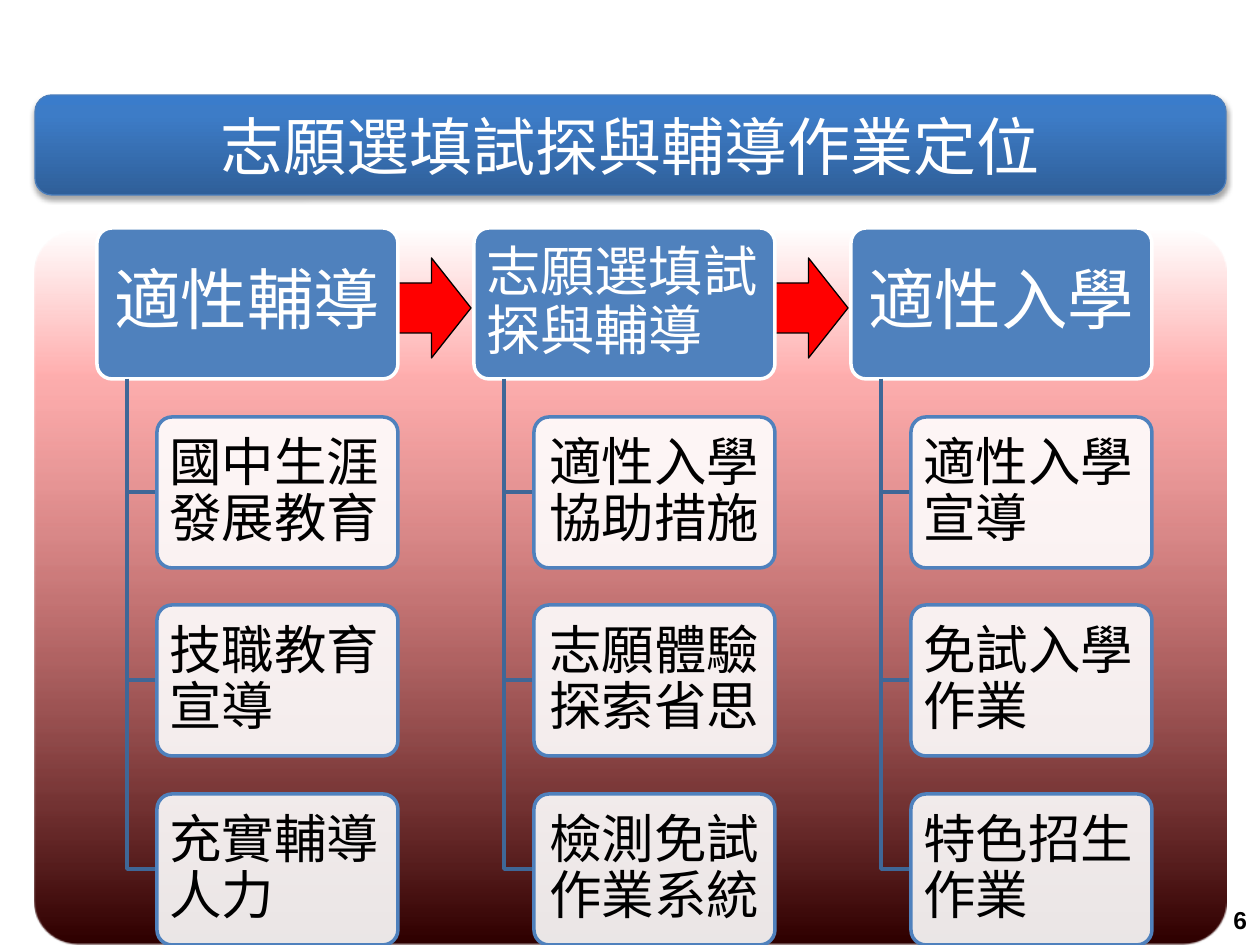
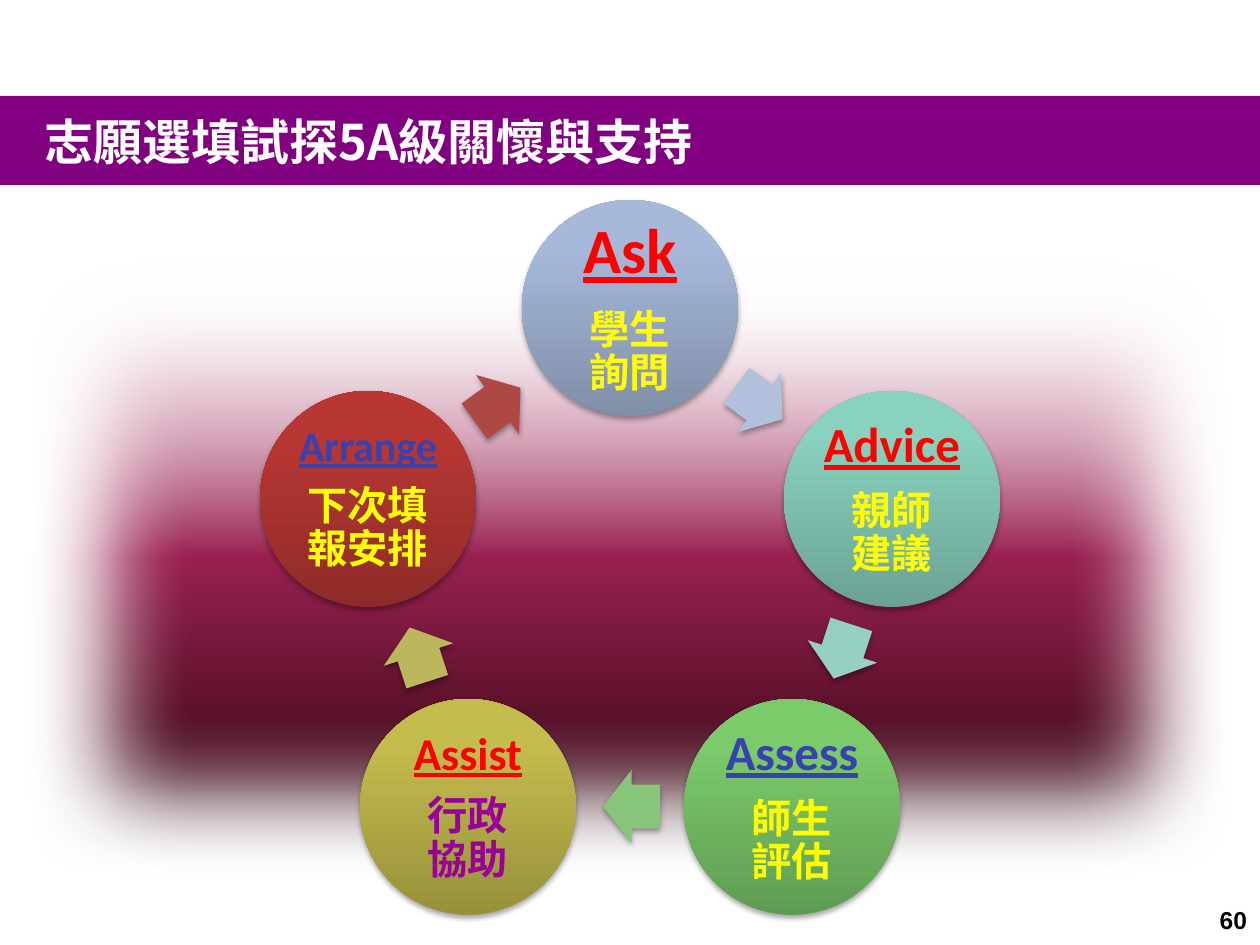
from math import cos, pi, sin

from lxml.etree import SubElement
from pptx import Presentation
from pptx.dml.color import RGBColor
from pptx.enum.shapes import MSO_SHAPE
from pptx.enum.text import MSO_ANCHOR, PP_ALIGN
from pptx.oxml.ns import qn
from pptx.util import Emu, Pt

PIXELS_PER_INCH = 126
CJK_FONT = "Noto Sans CJK SC"
COLORS = {
    "white": "FFFFFF", "black": "000000", "red": "FF0000", "yellow": "FFFF00",
    "indigo": "3742AF", "violet": "990099", "purple": "800080",
    "blue": "4F81BD", "branch": "3F6797", "bar_edge": "4B7EBC",
}
# Gradient stops run from bottom to top: position, colour, opacity (percent)
TITLE_STOPS = [(0, "2F5F99", 100), (80, "3D7CC7", 100), (100, "3A7CCB", 100)]
RED_PANEL_STOPS = [(0, "2E0000", 100), (80, "FF6161", 50), (100, "FF6161", 0)]
WINE_PANEL_STOPS = [(0, "1A0001", 100), (50, "992151", 100), (100, "FFFFFF", 0)]

# Heading, size, heading alignment, item alignment, items
STAGES = [
    ("適性輔導", 38, PP_ALIGN.CENTER, PP_ALIGN.LEFT,
     ["國中生涯發展教育", "技職教育宣導", "充實輔導人力"]),
    ("志願選填試探與輔導", 31, PP_ALIGN.LEFT, PP_ALIGN.CENTER,
     ["適性入學協助措施", "志願體驗探索省思", "檢測免試作業系統"]),
    ("適性入學", 38, PP_ALIGN.CENTER, PP_ALIGN.LEFT,
     ["適性入學宣導", "免試入學作業", "特色招生作業"]),
]
# Word, size, word colour, caption, caption colour, circle colours, arrow colour
CARE_STEPS = [
    ("Ask", 36, "red", "學生\n詢問", "yellow",
     ("808FA8", "A7B9DA", "A6BADC"), "B2C1DB"),
    ("Advice", 28, "red", "親師\n建議", "yellow",
     ("6AA293", "89D2BF", "89D4C0"), "96D0C1"),
    ("Assess", 28, "indigo", "師生\n評估", "yellow",
     ("5F9C53", "7CCB6B", "7BCD6A"), "87C67A"),
    ("Assist", 26, "red", "行政\n協助", "violet",
     ("97913B", "C4BC4D", "C7BF4B"), "BCB65D"),
    ("Arrange", 24, "indigo", "下次填報安排", "yellow",
     ("8E2B28", "B83734", "BB3531"), "AE4845"),
]


def px(length):
    return Emu(round(length * 914400 / PIXELS_PER_INCH))


def rgb(color):
    return RGBColor.from_string(COLORS.get(color, color))


def set_gradient(shape, stops):
    """Fill from bottom to top with the given stops."""
    shape.fill.gradient()
    shape.fill.gradient_angle = 90
    stop_list = shape._element.spPr.find(qn("a:gradFill")).find(qn("a:gsLst"))
    for old_stop in list(stop_list):
        stop_list.remove(old_stop)
    for position, color, opacity in stops:
        stop = SubElement(stop_list, qn("a:gs"), pos=str(position * 1000))
        stop_color = SubElement(stop, qn("a:srgbClr"), val=color)
        SubElement(stop_color, qn("a:alpha"), val=str(opacity * 1000))


def add_effect(shape, tag, **attributes):
    effects = shape._element.spPr.find(qn("a:effectLst"))
    return SubElement(effects, qn(tag), **attributes)


def add_shadow(shape):
    shadow = add_effect(shape, "a:outerShdw", blurRad="40000", dist="23000",
                        dir="5400000", rotWithShape="0")
    color = SubElement(shadow, qn("a:srgbClr"), val=COLORS["black"])
    SubElement(color, qn("a:alpha"), val="35000")


def set_line(shape, color, width):
    shape.line.color.rgb = rgb(color)
    shape.line.width = Pt(width)


def add_figure(slide, kind, box, fill, line=None, adjustments=()):
    """Add a preset shape; fill is a colour or a list of gradient stops."""
    shape = slide.shapes.add_shape(kind, *map(px, box))
    shape.shadow.inherit = False
    for index, value in enumerate(adjustments):
        shape.adjustments[index] = value
    if isinstance(fill, list):
        set_gradient(shape, fill)
    else:
        shape.fill.solid()
        shape.fill.fore_color.rgb = rgb(fill)
    if line:
        set_line(shape, *line)
    else:
        shape.line.fill.background()
    return shape


def set_frame(shape, horizontal=13, vertical=6):
    frame = shape.text_frame
    frame.word_wrap = True
    frame.vertical_anchor = MSO_ANCHOR.MIDDLE
    frame.margin_left = frame.margin_right = px(horizontal)
    frame.margin_top = frame.margin_bottom = px(vertical)
    return frame


def write(paragraph, text, size, color, alignment, font=CJK_FONT, bold=False,
          underline=False):
    paragraph.text = text
    paragraph.alignment = alignment
    paragraph.font.size = Pt(size)
    paragraph.font.bold = bold
    paragraph.font.underline = underline
    paragraph.font.color.rgb = rgb(color)
    paragraph.font.name = font
    defaults = paragraph._p.pPr.find(qn("a:defRPr"))
    SubElement(defaults, qn("a:ea"), typeface=font)


def set_diagram_spacing(paragraph):
    """Tight lines, followed by a gap of 35 % of the line."""
    paragraph.line_spacing = 0.9
    paragraph.space_after = Pt(0)
    gap = paragraph._p.pPr.find(qn("a:spcAft"))
    gap.remove(gap[0])
    SubElement(gap, qn("a:spcPct"), val="35000")


def add_page_number(slide, number):
    text_box = slide.shapes.add_textbox(px(966), px(895), px(294), px(50))
    write(set_frame(text_box).paragraphs[0], str(number), 14, "black",
          PP_ALIGN.RIGHT, font="Arial", bold=True)


def add_card(slide, box, text, size, fill, line, color, alignment, margins):
    card = add_figure(slide, MSO_SHAPE.ROUNDED_RECTANGLE, box, fill,
                      (line, 2), [0.1])
    paragraph = set_frame(card, *margins).paragraphs[0]
    set_diagram_spacing(paragraph)
    write(paragraph, text, size, color, alignment)
    return card


def add_branch(slide, left, top, right, bottom):
    builder = slide.shapes.build_freeform(px(left), px(top))
    builder.add_line_segments(
        [(px(left), px(bottom)), (px(right), px(bottom))], close=False)
    branch = builder.convert_to_shape()
    branch.shadow.inherit = False
    branch.fill.background()
    set_line(branch, "branch", 2)


def add_stage(slide, left, stage):
    heading, size, heading_alignment, item_alignment, items = stage
    add_card(slide, (left, 228, 301, 151), heading, size, "blue", "white",
             "white", heading_alignment, (10, 6) if size > 35 else (8, 5))
    for row, item in enumerate(items):
        top = 417 + row * 377 // 2
        add_branch(slide, left + 30, 379, left + 60, top + 75)
        card = add_card(slide, (left + 60, top, 241, 151), item, 30, "white",
                        "blue", "black", item_alignment, (8, 5))
        color = card._element.spPr.find(qn("a:solidFill"))[0]
        SubElement(color, qn("a:alpha"), val="90000")


def build_positioning_slide(slide):
    add_figure(slide, MSO_SHAPE.ROUNDED_RECTANGLE, (35, 231, 1191, 714),
               RED_PANEL_STOPS, adjustments=[0.061])
    title = add_figure(slide, MSO_SHAPE.ROUNDED_RECTANGLE, (35, 95, 1191, 100),
                       TITLE_STOPS, ("bar_edge", 0.75))
    add_shadow(title)
    write(set_frame(title).paragraphs[0], "志願選填試探與輔導作業定位", 36,
          "white", PP_ALIGN.CENTER)
    stage_lefts = [97 + 377 * column for column in range(len(STAGES))]
    for left in stage_lefts[:-1]:
        add_figure(slide, MSO_SHAPE.RIGHT_ARROW, (left + 295, 258, 79, 100),
                   "red", ("black", 0.75))
    for left, stage in zip(stage_lefts, STAGES):
        add_stage(slide, left, stage)
    add_page_number(slide, 6)


def box_on_ring(radius, degrees, width, height):
    """Box centred on the ring, at an angle clockwise from the top."""
    angle = degrees * pi / 180
    center_x = 630 + radius * sin(angle)
    center_y = 584 - radius * cos(angle)
    return (round(center_x - width / 2), round(center_y - height / 2),
            width, height)


def add_care_step(slide, degrees, step):
    word, size, word_color, caption, caption_color, shades, arrow_color = step
    stops = [(position, shade, 100)
             for position, shade in zip((0, 80, 100), shades)]
    circle = add_figure(slide, MSO_SHAPE.OVAL,
                        box_on_ring(276, degrees, 216, 216), stops)
    add_shadow(circle)
    frame = set_frame(circle, 5, 5)
    for paragraph in (frame.paragraphs[0], frame.add_paragraph()):
        set_diagram_spacing(paragraph)
    write(frame.paragraphs[0], word, size, word_color, PP_ALIGN.CENTER,
          font="Calibri", bold=True, underline=True)
    write(frame.paragraphs[1], caption, 23, caption_color, PP_ALIGN.CENTER,
          bold=True)
    arrow = add_figure(slide, MSO_SHAPE.RIGHT_ARROW,
                       box_on_ring(223, degrees + 35.5, 57, 73), arrow_color,
                       adjustments=[0.6, 0.5])
    arrow.rotation = degrees + 36
    add_shadow(arrow)


def build_care_slide(slide):
    panel = add_figure(slide, MSO_SHAPE.ROUNDED_RECTANGLE, (25, 234, 1211, 645),
                       WINE_PANEL_STOPS, adjustments=[0.02])
    add_effect(panel, "a:softEdge", rad="635000")
    title = add_figure(slide, MSO_SHAPE.RECTANGLE, (0, 96, 1260, 89), "purple")
    write(set_frame(title, horizontal=45).paragraphs[0],
          "志願選填試探5A級關懷與支持", 28, "white", PP_ALIGN.LEFT, bold=True)
    for index, step in enumerate(CARE_STEPS):
        add_care_step(slide, index * 360 / len(CARE_STEPS), step)
    add_page_number(slide, 60)


def main():
    presentation = Presentation()
    presentation.slide_width = px(1260)
    presentation.slide_height = px(945)
    blank_layout = presentation.slide_layouts[6]
    for build in (build_positioning_slide, build_care_slide):
        build(presentation.slides.add_slide(blank_layout))
    presentation.save("out.pptx")


if __name__ == "__main__":
    main()
